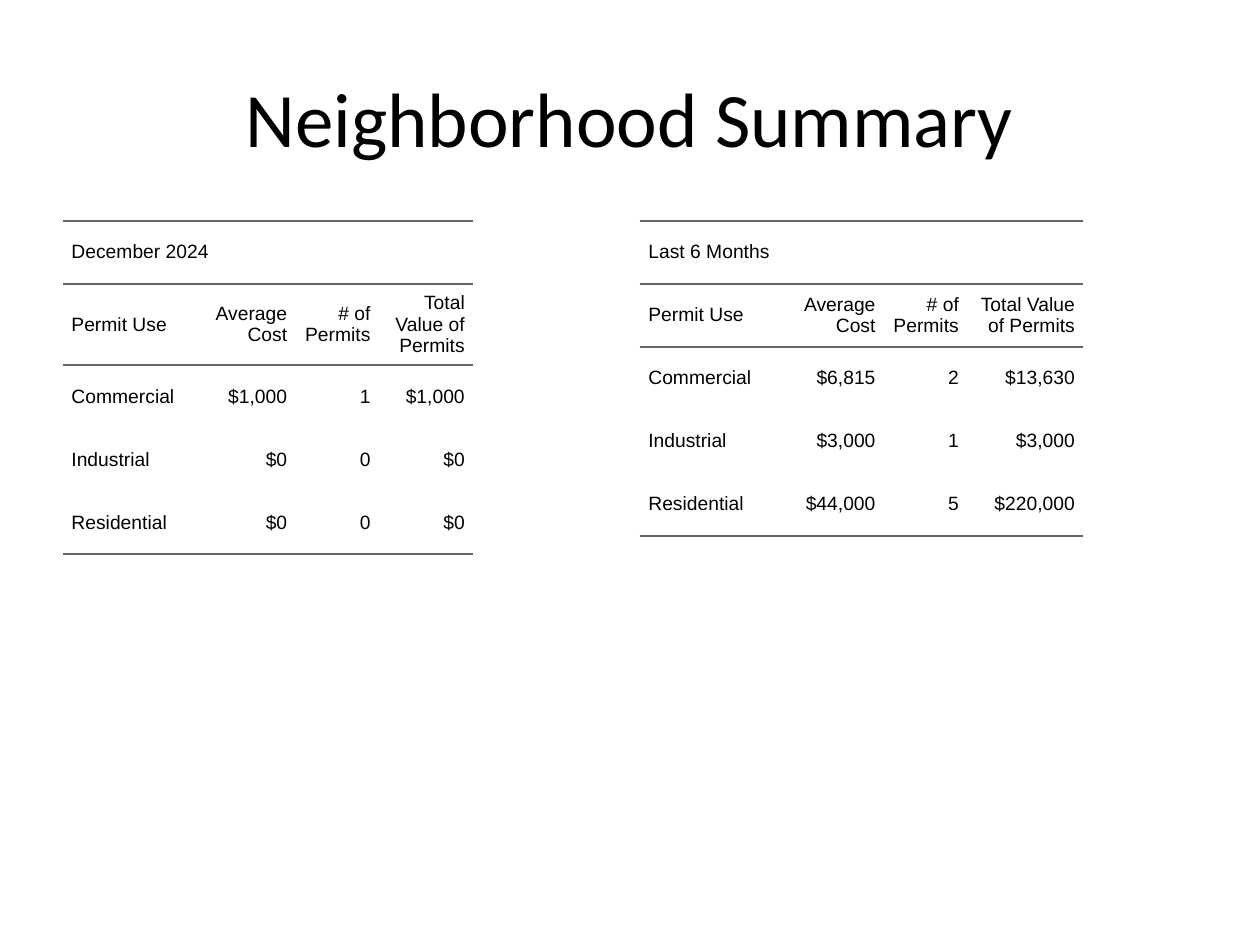
from lxml import etree
from pptx import Presentation
from pptx.dml.color import RGBColor
from pptx.enum.text import MSO_ANCHOR, PP_ALIGN
from pptx.oxml.ns import qn
from pptx.util import Cm, Pt

MIDDLE = MSO_ANCHOR.MIDDLE
LEFT, CENTER, RIGHT = PP_ALIGN.LEFT, PP_ALIGN.CENTER, PP_ALIGN.RIGHT
TITLE_ONLY = 5

COLORS = {"text": "000000", "rule": "666666"}
HEADINGS = ["Permit Use", "Average Cost", "# of Permits", "Total Value of Permits"]
ROW_HEIGHT = 1.27
CELL_MARGIN = 0.17
RULE_WIDTH = Pt(1.5)

PERMIT_TABLES = [
    {
        "period": "December 2024",
        "left": 1.27,
        "columns": [2.79, 1.9, 1.68, 1.9],
        "rows": [
            ["Commercial", "$1,000", "1", "$1,000"],
            ["Industrial", "$0", "0", "$0"],
            ["Residential", "$0", "0", "$0"],
        ],
    },
    {
        "period": "Last 6 Months",
        "left": 12.9,
        "columns": [2.79, 2.13, 1.68, 2.34],
        "rows": [
            ["Commercial", "$6,815", "2", "$13,630"],
            ["Industrial", "$3,000", "1", "$3,000"],
            ["Residential", "$44,000", "5", "$220,000"],
        ],
    },
]


def write_text(text_frame, text, font_name, size, alignment):
    paragraph = text_frame.paragraphs[0]
    paragraph.alignment = alignment
    run = paragraph.add_run()
    run.text = text
    run.font.name = font_name
    run.font.size = Pt(size)
    run.font.color.rgb = RGBColor.from_string(COLORS["text"])


def set_borders(cell, ruled_sides):
    """Rule the given sides (L, R, T, B) of a cell and clear the others."""
    properties = cell._tc.get_or_add_tcPr()
    for position, side in enumerate("LRTB"):
        line = etree.Element(qn(f"a:ln{side}"))
        if side in ruled_sides:
            line.set("w", str(RULE_WIDTH))
            fill = etree.SubElement(line, qn("a:solidFill"))
            etree.SubElement(fill, qn("a:srgbClr"), val=COLORS["rule"])
        else:
            etree.SubElement(line, qn("a:noFill"))
        properties.insert(position, line)


def add_title(slide, text, left, top, width, height):
    title = slide.shapes.title
    title.left, title.top = Cm(left), Cm(top)
    title.width, title.height = Cm(width), Cm(height)
    title.text_frame.vertical_anchor = MIDDLE
    write_text(title.text_frame, text, "Calibri", 44, CENTER)


def add_permit_table(slide, period, left, top, columns, rows):
    """Add a table with a period row, a heading row and one row per permit use."""
    contents = [[period], HEADINGS, *rows]
    last_row = len(contents) - 1
    frame = slide.shapes.add_table(
        len(contents), len(columns), Cm(left), Cm(top),
        Cm(sum(columns)), Cm(ROW_HEIGHT * len(contents)),
    )
    table = frame.table
    table.first_row = table.horz_banding = False
    for column, width in zip(table.columns, columns):
        column.width = Cm(width)

    ruled_sides = {0: "TB", 1: "TB", 2: "T", last_row: "B"}
    for row_index, row_texts in enumerate(contents):
        table.rows[row_index].height = Cm(ROW_HEIGHT)
        for column_index in range(len(columns)):
            cell = table.cell(row_index, column_index)
            cell.fill.background()
            cell.vertical_anchor = MIDDLE
            cell.margin_left = cell.margin_right = Cm(CELL_MARGIN)
            cell.margin_top = cell.margin_bottom = Cm(CELL_MARGIN)
            set_borders(cell, ruled_sides.get(row_index, ""))
            if column_index < len(row_texts):
                alignment = RIGHT if column_index else LEFT
                write_text(cell.text_frame, row_texts[column_index], "Arial", 11, alignment)
    table.cell(0, 0).merge(table.cell(0, len(columns) - 1))


def main():
    presentation = Presentation()
    presentation.slide_width, presentation.slide_height = Cm(25.4), Cm(19.05)
    slide = presentation.slides.add_slide(presentation.slide_layouts[TITLE_ONLY])
    add_title(slide, "Neighborhood Summary", 1.27, 0.76, 22.86, 3.18)
    for permit_table in PERMIT_TABLES:
        add_permit_table(slide, top=4.45, **permit_table)
    presentation.save("out.pptx")


if __name__ == "__main__":
    main()
